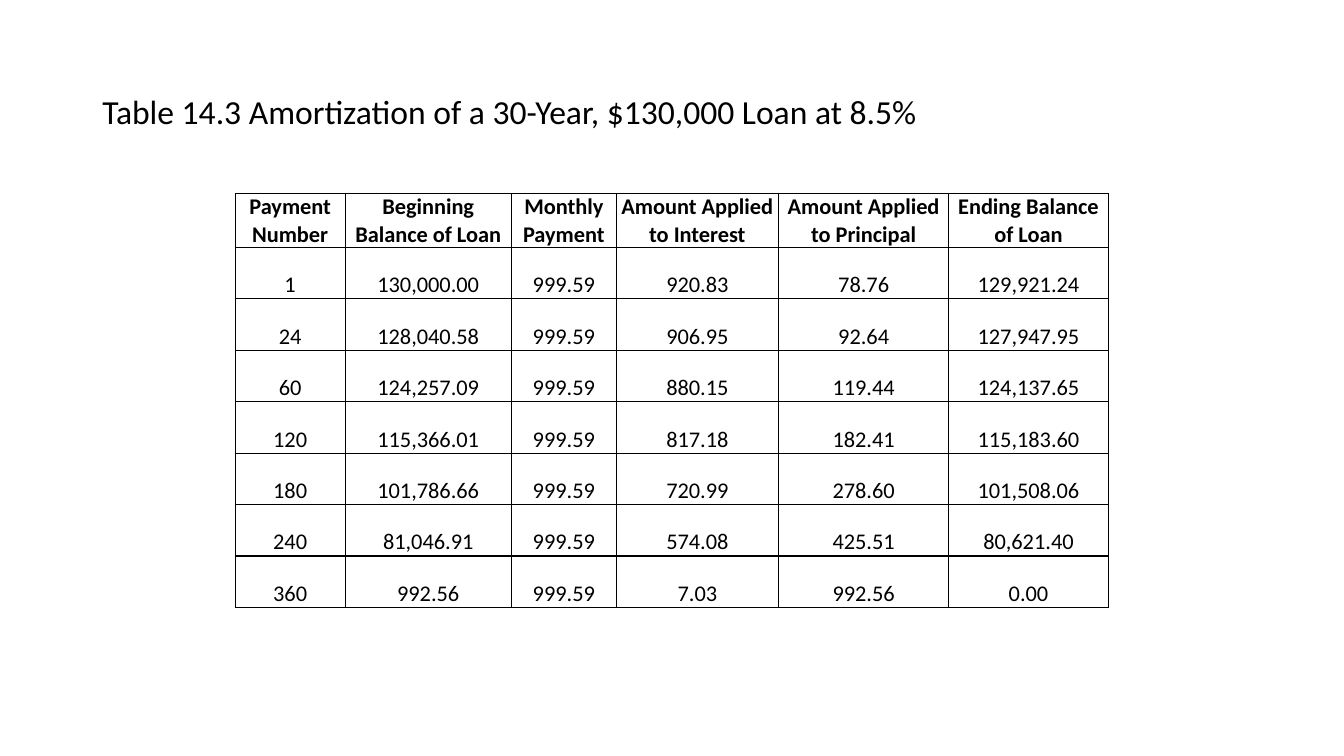
from lxml import etree
from pptx import Presentation
from pptx.dml.color import RGBColor
from pptx.enum.text import MSO_ANCHOR, PP_ALIGN
from pptx.oxml.ns import qn
from pptx.util import Pt

BLACK = RGBColor(0x00, 0x00, 0x00)
MIDDLE, BOTTOM = MSO_ANCHOR.MIDDLE, MSO_ANCHOR.BOTTOM
CENTER = PP_ALIGN.CENTER

# Content
TITLE = "Table 14.3 Amortization of a 30-Year, $130,000 Loan at 8.5%"
HEADERS = ["Payment Number", "Beginning Balance of Loan", "Monthly Payment",
           "Amount Applied to Interest", "Amount Applied to Principal",
           "Ending Balance of Loan"]
PAYMENTS = [
    ("1", "130,000.00", "999.59", "920.83", "78.76", "129,921.24"),
    ("24", "128,040.58", "999.59", "906.95", "92.64", "127,947.95"),
    ("60", "124,257.09", "999.59", "880.15", "119.44", "124,137.65"),
    ("120", "115,366.01", "999.59", "817.18", "182.41", "115,183.60"),
    ("180", "101,786.66", "999.59", "720.99", "278.60", "101,508.06"),
    ("240", "81,046.91", "999.59", "574.08", "425.51", "80,621.40"),
    ("360", "992.56", "999.59", "7.03", "992.56", "0.00"),
]

# Layout in points
TITLE_BOX = (66, 28.8, 828, 104.4)
TABLE_LEFT, TABLE_TOP = 168, 138.3
COL_WIDTHS = [78.5, 118.8, 74.9, 115.9, 121.7, 113.8]
ROW_HEIGHT = 36.75
CELL_FORMAT = {"vertical_anchor": BOTTOM, "margin_left": Pt(3.6),
               "margin_right": Pt(3.6), "margin_top": 0, "margin_bottom": 0}


def set_attrs(obj, values):
    for name, value in values.items():
        setattr(obj, name, value)


def write(p, text, size, bold=False):
    r = p.add_run()
    r.text = text
    set_attrs(r.font, {"name": "Calibri", "size": Pt(size), "bold": bold})
    r.font.color.rgb = BLACK


def add_borders(cell):
    tcPr = cell._tc.get_or_add_tcPr()
    for i, side in enumerate(("a:lnL", "a:lnR", "a:lnT", "a:lnB")):
        ln = etree.Element(qn(side), w=str(Pt(1)))
        fill = etree.SubElement(ln, qn("a:solidFill"))
        etree.SubElement(fill, qn("a:srgbClr"), val=str(BLACK))
        tcPr.insert(i, ln)


prs = Presentation()
prs.slide_width, prs.slide_height = Pt(960), Pt(540)
s = prs.slides.add_slide(prs.slide_layouts[6])

# Title
tf = s.shapes.add_textbox(*map(Pt, TITLE_BOX)).text_frame
set_attrs(tf, {"word_wrap": True, "vertical_anchor": MIDDLE})
tf.paragraphs[0].line_spacing = 0.9
write(tf.paragraphs[0], TITLE, 24)

# Amortization table
rows = [HEADERS, *PAYMENTS]
table = s.shapes.add_table(
    len(rows), len(HEADERS), Pt(TABLE_LEFT), Pt(TABLE_TOP),
    Pt(sum(COL_WIDTHS)), Pt(ROW_HEIGHT * len(rows))).table
set_attrs(table, {"first_row": False, "horz_banding": False})
for col, width in zip(table.columns, COL_WIDTHS):
    col.width = Pt(width)
for i, values in enumerate(rows):
    table.rows[i].height = Pt(ROW_HEIGHT)
    for j, text in enumerate(values):
        cell = table.cell(i, j)
        set_attrs(cell, CELL_FORMAT)
        cell.fill.background()
        add_borders(cell)
        p = cell.text_frame.paragraphs[0]
        p.alignment = CENTER
        write(p, text, 16, bold=i == 0)

prs.save("out.pptx")
